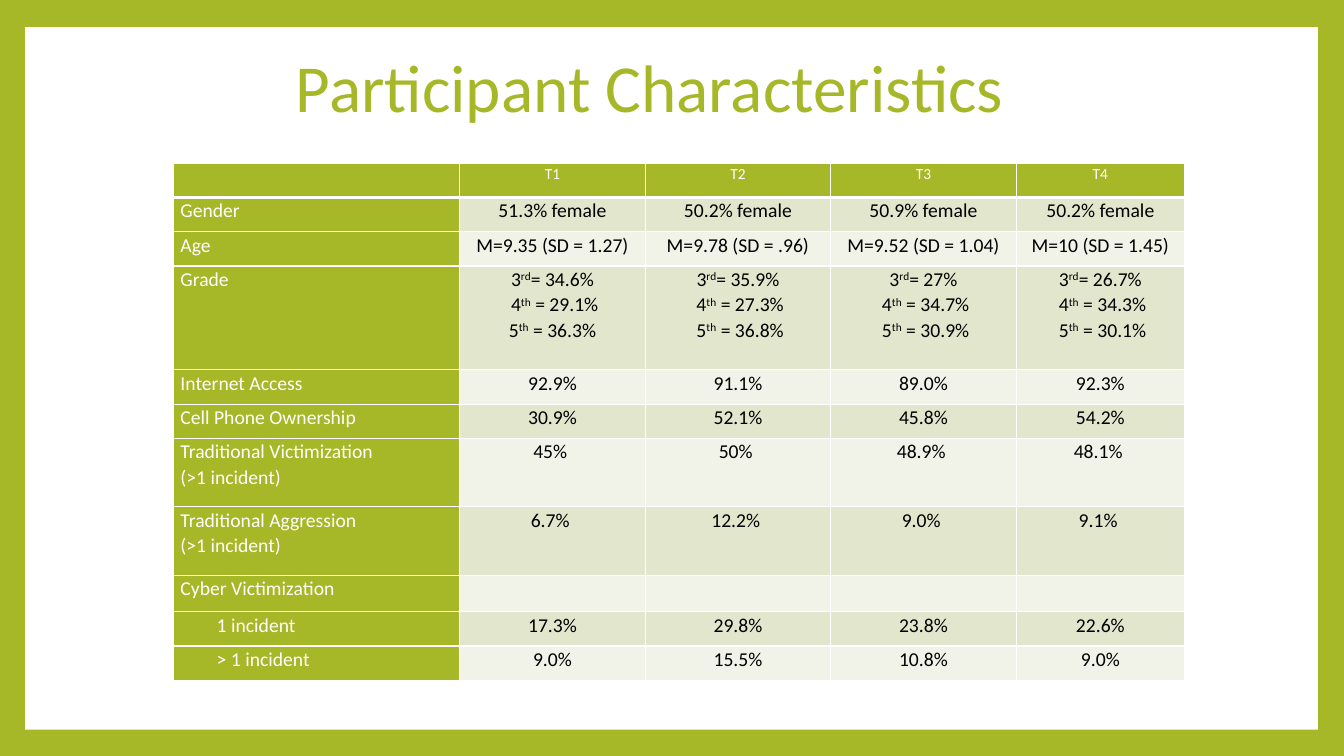
from pptx import Presentation
from pptx.dml.color import RGBColor
from pptx.enum.shapes import MSO_SHAPE
from pptx.enum.text import MSO_ANCHOR, PP_ALIGN
from pptx.oxml import parse_xml
from pptx.oxml.ns import nsdecls
from pptx.util import Inches, Pt

GREEN = RGBColor(0xA6, 0xB7, 0x27)
WHITE = RGBColor(0xFF, 0xFF, 0xFF)
BLACK = RGBColor(0x00, 0x00, 0x00)
DARK = RGBColor(0xE1, 0xE6, 0xCD)
PALE = RGBColor(0xF1, 0xF3, 0xE8)
RECT = MSO_SHAPE.RECTANGLE
MIDDLE = MSO_ANCHOR.MIDDLE
LEFT = PP_ALIGN.LEFT
CENTER = PP_ALIGN.CENTER
FONT = "Calibri"


def write(frame, text, size=14, color=BLACK, align=CENTER, space=1.07, indent=0):
    for i, line in enumerate(text.split("\n")):
        para = frame.add_paragraph() if i else frame.paragraphs[0]
        para.alignment = align
        para.line_spacing = space
        if indent:
            props = para._p.get_or_add_pPr()
            props.set("marL", str(Inches(indent)))
            props.set("indent", "0")
        if not line:
            para._p.get_or_add_endParaRPr().set("sz", str(size * 100))
            continue
        for j, part in enumerate(line.split("^")):
            run = para.add_run()
            run.text = part
            run.font.name = FONT
            run.font.size = Pt(size)
            run.font.bold = False
            run.font.color.rgb = color
            if j % 2:
                run.font._element.set("baseline", "30000")


prs = Presentation()
prs.slide_width = Inches(13.33)
prs.slide_height = Inches(7.5)
slide = prs.slides.add_slide(prs.slide_layouts[5])
slide.background.fill.solid()
slide.background.fill.fore_color.rgb = GREEN

panel = slide.shapes.add_shape(RECT, Inches(0.25), Inches(0.27), Inches(12.82), Inches(6.97))
panel.shadow.inherit = False
panel.fill.solid()
panel.fill.fore_color.rgb = WHITE
panel.line.fill.background()
slide.shapes._spTree.insert(2, panel._element)

title = slide.shapes.title
title.left, title.top = Inches(1.72), Inches(0.44)
title.width, title.height = Inches(9.45), Inches(0.93)
title.text_frame.vertical_anchor = MIDDLE
write(title.text_frame, "Participant Characteristics", size=48, color=GREEN, space=0.9)

grades = [
    f"3^rd^= {third}\n 4^th^ = {fourth}\n 5^th^ = {fifth}"
    for third, fourth, fifth in [
        ("34.6%", "29.1%", "36.3% "),
        ("35.9%", "27.3%", "36.8%"),
        ("27%", "34.7%", "30.9%"),
        ("26.7%", "34.3%", "30.1%"),
    ]
]
rows = [
    (0.34, ["", "T1", "T2", "T3", "T4"]),
    (0.34, ["Gender", "51.3% female", "50.2% female", "50.9% female", "50.2% female"]),
    (0.34, ["Age", "M=9.35 (SD = 1.27)", "M=9.78 (SD = .96)", "M=9.52 (SD = 1.04)", "M=10 (SD = 1.45)"]),
    (1.03, ["Grade"] + grades),
    (0.34, ["Internet Access", "92.9%", "91.1%", "89.0%", "92.3%"]),
    (0.34, ["Cell Phone Ownership", "30.9%", "52.1%", "45.8%", "54.2%"]),
    (0.68, ["Traditional Victimization\n(>1 incident)", "45% ", "50% ", "48.9% ", "48.1% "]),
    (0.68, ["Traditional Aggression\n(>1 incident)", "6.7% ", "12.2% ", "9.0% ", "9.1% "]),
    (0.36, ["Cyber Victimization", "", "", "", ""]),
    (0.34, ["1 incident", "17.3%", "29.8%", "23.8%", "22.6%"]),
    (0.34, ["> 1 incident", "9.0%", "15.5%", "10.8%", "9.0%"]),
]
widths = [2.84, 1.84, 1.84, 1.84, 1.67]

grid = slide.shapes.add_table(
    len(rows), len(widths), Inches(1.72), Inches(1.62), Inches(sum(widths)), Inches(5.1)
).table
for col, width in zip(grid.columns, widths):
    col.width = Inches(width)

for r, (height, texts) in enumerate(rows):
    grid.rows[r].height = Inches(height)
    for c, text in enumerate(texts):
        cell = grid.cell(r, c)
        cell.margin_left = cell.margin_right = Inches(0.07)
        cell.margin_top = cell.margin_bottom = 0
        head = r == 0 or c == 0
        write(
            cell.text_frame,
            text,
            size=14 if r else 11,
            color=WHITE if head else BLACK,
            align=CENTER if c else LEFT,
            indent=0.36 if c == 0 and r > 8 else 0,
        )
        props = cell._tc.get_or_add_tcPr()
        for side in "LRTB":
            wide = Pt(3 if r == 0 and side == "B" else 1)
            props.append(parse_xml(
                f'<a:ln{side} {nsdecls("a")} w="{wide}"><a:solidFill>'
                f'<a:srgbClr val="{WHITE}"/></a:solidFill></a:ln{side}>'
            ))
        cell.fill.solid()
        cell.fill.fore_color.rgb = GREEN if head else DARK if r % 2 else PALE

prs.save("out.pptx")
